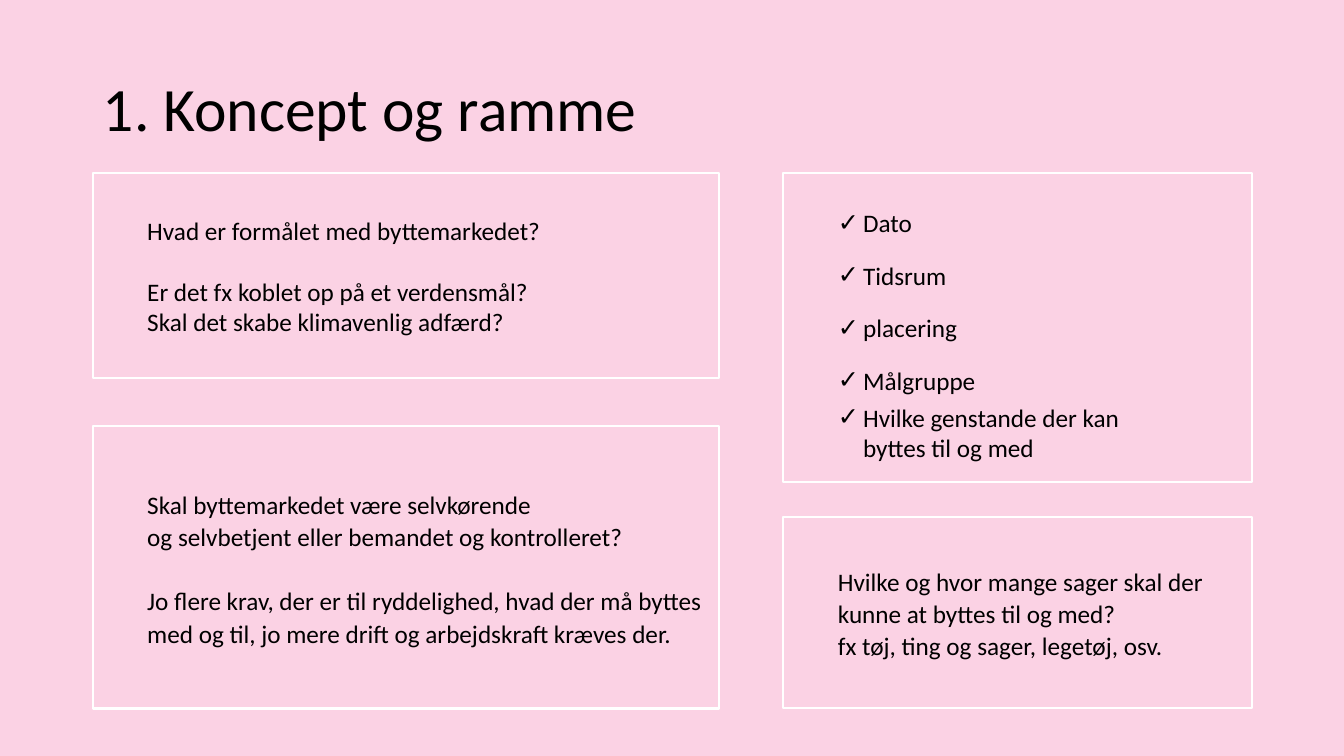
from pptx import Presentation
from pptx import util as u
from pptx.dml.color import RGBColor
from pptx.enum import text
from lxml import etree

COLORS = {"background": "FBD2E4", "text": "000000", "frame": "FFFFFF"}
DRAWING = "{http://schemas.openxmlformats.org/drawingml/2006/main}"
LEFT, RIGHT = 0.92, 7.77
LEFT_WIDTH, RIGHT_WIDTH = 6.21, 4.65
TOP = 1.72


class FramedSlide:
    """Builds a slide of framed text boxes in one common style."""

    def __init__(self, presentation, font="Calibri", size=18):
        self.font, self.size = font, size
        self.slide = presentation.slides.add_slide(presentation.slide_layouts[1])
        fill = self.slide.background.fill
        fill.solid()
        fill.fore_color.rgb = RGBColor.from_string(COLORS["background"])

    def place(self, shape, left, top, width, height):
        shape.left, shape.top = u.Inches(left), u.Inches(top)
        shape.width, shape.height = u.Inches(width), u.Inches(height)
        frame = shape.text_frame
        frame.word_wrap = True
        frame.auto_size = text.MSO_AUTO_SIZE.NONE
        frame.vertical_anchor = text.MSO_ANCHOR.MIDDLE

    def style(self, paragraph, size):
        paragraph.alignment = text.PP_ALIGN.LEFT
        paragraph.font.name = self.font
        paragraph.font.size = u.Pt(size)
        paragraph.font.color.rgb = RGBColor.from_string(COLORS["text"])

    def title(self, words, *box):
        shape = self.slide.shapes.title
        self.place(shape, *box)
        shape.text_frame.text = words
        paragraph = shape.text_frame.paragraphs[0]
        paragraph.line_spacing = 0.9
        self.style(paragraph, 44)

    def frame(self, shape, box, words):
        self.place(shape, *box)
        shape.line.color.rgb = RGBColor.from_string(COLORS["frame"])
        shape.line.width = u.Pt(1.5)
        frame = shape.text_frame
        frame.margin_left, frame.margin_right = u.Inches(0.04), u.Inches(0.1)
        frame.margin_top = frame.margin_bottom = u.Inches(0.05)
        frame.text = "\n".join(words)
        return frame.paragraphs

    def indent(self, paragraph, left, hanging=0):
        properties = paragraph._p.get_or_add_pPr()
        properties.set("marL", str(u.Inches(left)))
        properties.set("indent", str(-u.Inches(hanging)))
        return properties

    def questions(self, words, *box, spacing=1.0, gap=5):
        shape = self.slide.shapes.add_textbox(0, 0, 0, 0)
        for number, paragraph in enumerate(self.frame(shape, box, words)):
            self.indent(paragraph, 0.5)
            paragraph.line_spacing = spacing
            paragraph.space_before = u.Pt(gap if number else 5)
            self.style(paragraph, self.size)

    def checklist(self, words, *box):
        paragraphs = self.frame(self.slide.placeholders[1], box, words)
        for paragraph in paragraphs:
            properties = self.indent(paragraph, 0.75, 0.25)
            paragraph.line_spacing = 1.0 if paragraph is paragraphs[-1] else 1.5
            paragraph.space_before = u.Pt(5)
            etree.SubElement(properties, DRAWING + "buChar", char="✓")
            self.style(paragraph, self.size)


def main():
    presentation = Presentation()
    presentation.slide_width = u.Inches(13.33)
    presentation.slide_height = u.Inches(7.5)
    slide = FramedSlide(presentation)
    slide.title("1. Koncept og ramme", LEFT, 0.38, 11.5, 1.45)
    slide.checklist(
        ["Dato", "Tidsrum", "placering", "Målgruppe",
         "Hvilke genstande der kan\vbyttes til og med"],
        RIGHT, TOP, RIGHT_WIDTH, 3.06)
    slide.questions(
        ["Hvilke og hvor mange sager skal der kunne at byttes til og med?\v"
         "fx tøj, ting og sager, legetøj, osv."],
        RIGHT, 5.13, RIGHT_WIDTH, 1.89, spacing=1.07)
    slide.questions(
        ["Hvad er formålet med byttemarkedet?",
         "Er det fx koblet op på et verdensmål?\vSkal det skabe klimavenlig adfærd?"],
        LEFT, TOP, LEFT_WIDTH, 2.03, gap=22)
    slide.questions(
        ["Skal byttemarkedet være selvkørende\v"
         "og selvbetjent eller bemandet og kontrolleret?",
         "Jo flere krav, der er til ryddelighed, hvad der må byttes med og til, "
         "jo mere drift og arbejdskraft kræves der."],
        LEFT, 4.23, LEFT_WIDTH, 2.8, spacing=1.07, gap=23)
    presentation.save("out.pptx")


if __name__ == "__main__":
    main()
